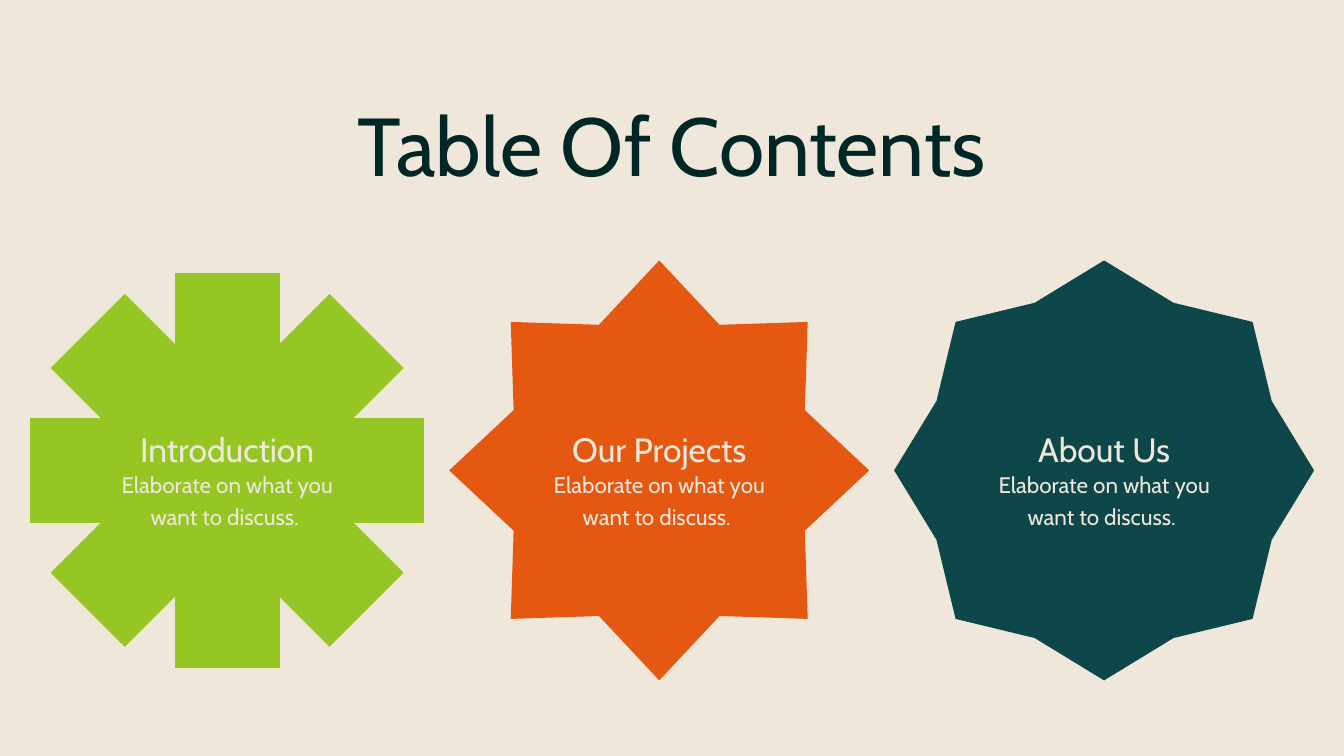
from math import cos, pi, sin

from pptx import Presentation
from pptx.dml.color import RGBColor
from pptx.enum.text import MSO_AUTO_SIZE, PP_ALIGN
from pptx.util import Emu, Pt

PX = 9144
CREAM, INK = "EFE7DA", "002626"
GREEN, ORANGE, TEAL = "95C623", "E55812", "0E4749"
CENTER_Y = 700
DETAIL = "Elaborate on what you want to discuss. "


def px(n):
    """Turn px (100 to the inch) into EMU."""
    return Emu(round(n * PX))


def color(value):
    """Turn a hex string into a colour."""
    return RGBColor.from_string(value)


def add_outline(slide, points, fill):
    """Draw a closed, filled outline through points in px."""
    points = [(px(x), px(y)) for x, y in points]
    builder = slide.shapes.build_freeform(*points[0], scale=1.0)
    builder.add_line_segments(points[1:], close=True)
    sp = builder.convert_to_shape()
    sp.shadow.inherit = False
    sp.fill.solid()
    sp.fill.fore_color.rgb = color(fill)
    sp.line.fill.background()
    return sp


def add_asterisk(slide, cx, fill, width=156, height=587):
    """Cross four equal bars at 45 degree steps."""
    dx, dy = width / 2, height / 2
    corners = [(-dx, -dy), (dx, -dy), (dx, dy), (-dx, dy)]
    points = [(cx + x, CENTER_Y + y) for x, y in corners]
    for angle in (0, 90, 45, 135):
        add_outline(slide, points, fill).rotation = angle


def add_star(slide, cx, fill, inner, outer=312.5, tips=8):
    """Draw a star whose radius alternates between outer and inner."""
    points = []
    for i in range(2 * tips):
        radius = inner if i % 2 else outer
        angle = i * pi / tips
        points.append((cx + radius * sin(angle), CENTER_Y - radius * cos(angle)))
    add_outline(slide, points, fill)


def add_text(slide, text, *, left, top, width, height, size, fill=CREAM):
    """Add a centred text box."""
    sp = slide.shapes.add_textbox(px(left), px(top), px(width), px(height))
    tf = sp.text_frame
    tf.word_wrap = True
    tf.auto_size = MSO_AUTO_SIZE.SHAPE_TO_FIT_TEXT
    tf.margin_left = tf.margin_right = tf.margin_top = tf.margin_bottom = 0
    p = tf.paragraphs[0]
    p.alignment = PP_ALIGN.CENTER
    p.line_spacing = 1.2
    r = p.add_run()
    r.text = text
    r.font.name = "Cabin"
    r.font.size = Pt(size)
    r.font.color.rgb = color(fill)


def add_topic(slide, heading, cx):
    """Add a heading and its detail around a centre line."""
    box = {"left": cx - 181, "width": 362}
    add_text(slide, heading, top=626, height=59, size=36, **box)
    add_text(slide, DETAIL, top=693, height=80, size=24, **box)


def main():
    """Build the contents slide."""
    prs = Presentation()
    prs.slide_width, prs.slide_height = px(2000), px(1125)
    slide = prs.slides.add_slide(prs.slide_layouts[6])
    slide.background.fill.solid()
    slide.background.fill.fore_color.rgb = color(CREAM)

    topics = {"Introduction": 338, "Our Projects": 981, "About Us": 1643}
    intro_x, projects_x, about_x = topics.values()
    add_asterisk(slide, intro_x, GREEN)
    add_star(slide, projects_x, ORANGE, inner=234.5)
    add_star(slide, about_x, TEAL, inner=270)

    add_text(slide, "Table Of Contents", left=97, top=111, width=1805,
             height=147, size=88, fill=INK)
    for heading, cx in topics.items():
        add_topic(slide, heading, cx)
    prs.save("out.pptx")


if __name__ == "__main__":
    main()
